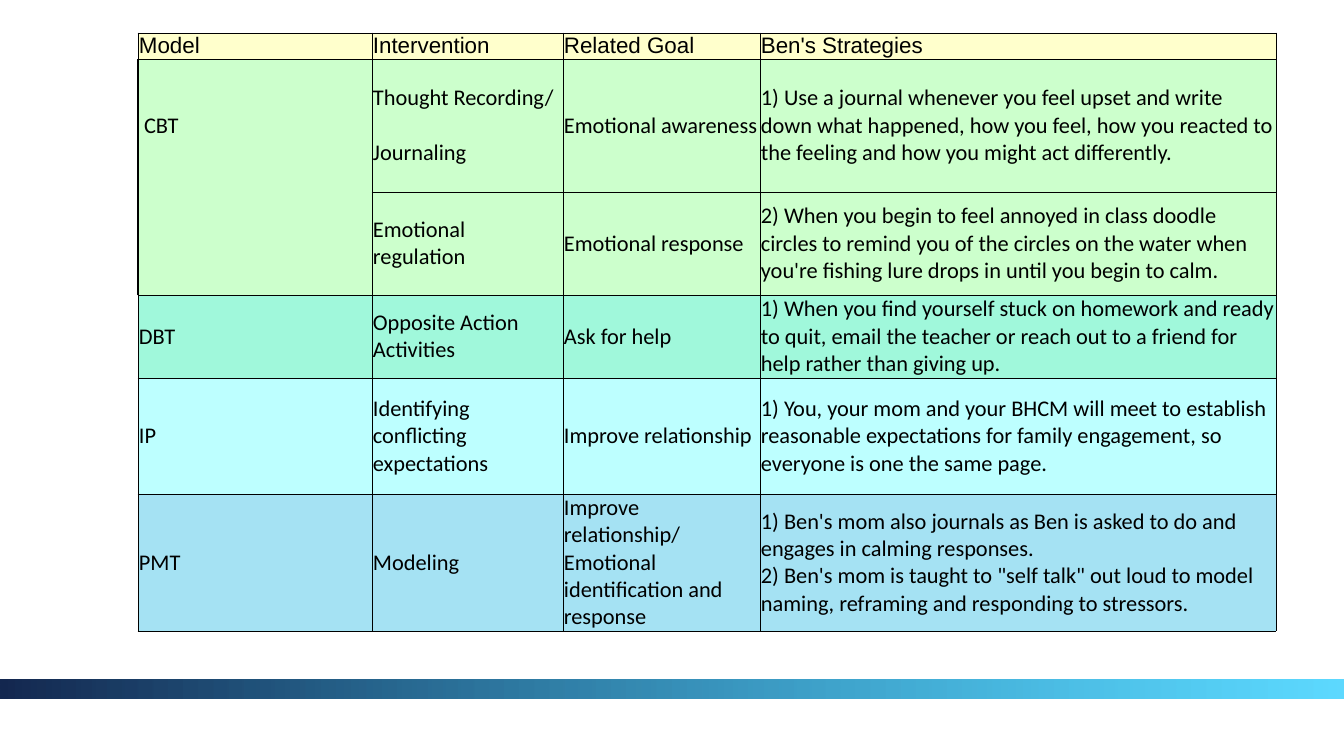
from itertools import accumulate
from lxml import etree
from pptx import Presentation
from pptx.dml.color import RGBColor
from pptx.enum.shapes import MSO_SHAPE
from pptx.enum.text import MSO_ANCHOR, PP_ALIGN
from pptx.oxml.ns import qn
from pptx.util import Emu, Pt

RECTANGLE = MSO_SHAPE.RECTANGLE
MIDDLE, LEFT = MSO_ANCHOR.MIDDLE, PP_ALIGN.LEFT

# Content: each cell is a list of paragraphs
HEADINGS = ["Model", "Intervention", "Related Goal", "Ben's Strategies"]
STRATEGIES = [
    ("cbt", [[" CBT"], ["Thought Recording/", "Journaling"], ["Emotional awareness"],
             ["1) Use a journal whenever you feel upset and write down what happened, "
              "how you feel, how you reacted to the feeling and how you might act differently."]]),
    ("cbt", [[], ["Emotional regulation"], ["Emotional response"],
             ["2) When you begin to feel annoyed in class doodle circles to remind you of "
              "the circles on the water when you're fishing lure drops in until you begin to calm."]]),
    ("dbt", [["DBT"], ["Opposite Action Activities"], ["Ask for help"],
             ["1) When you find yourself stuck on homework and ready to quit, email the teacher "
              "or reach out to a friend for help rather than giving up."]]),
    ("ip", [["IP"], ["Identifying conflicting expectations"], ["Improve relationship"],
            ["1) You, your mom and your BHCM will meet to establish reasonable expectations "
             "for family engagement, so everyone is one the same page."]]),
    ("pmt", [["PMT"], ["Modeling"],
             ["Improve relationship/ Emotional identification and response"],
             ["1) Ben's mom also journals as Ben is asked to do and engages in calming responses.",
              "2) Ben's mom is taught to \"self talk\" out loud to model naming, reframing "
              "and responding to stressors."]]),
]
ROWS = [("heading", [[heading] for heading in HEADINGS])] + STRATEGIES
JOURNALING_CELL = (1, 1)
CBT_ROWS = (1, 2)

COLORS = {
    "heading": "FFFFCC", "cbt": "CCFFCC", "dbt": "A0F8DB", "ip": "BDFFFF", "pmt": "A5E2F3",
    "text": "000000", "border": "000000", "bar_start": "142850", "bar_end": "00C4FF",
}

# Layout in px
PX = 914400 / 100.8
SLIDE_W, SLIDE_H = 1344, 756
TABLE_X, TABLE_Y = 138, 33
COLUMN_WIDTHS = [234, 191, 197, 516]
ROW_HEIGHTS = [26, 133, 103, 83, 116, 137]
BAR_Y, BAR_H = 680, 19
TEXT_SIZE, LINE_GAP = Pt(16), Pt(19.5)


def px(length):
    return Emu(round(length * PX))


def rgb(name):
    return RGBColor.from_string(COLORS[name])


def add_border(cell, index, side, points):
    """Draw one cell edge; zero points hides it."""
    line = etree.Element(qn("a:ln" + side), w=str(Pt(points or 0.5)))
    if points:
        fill = etree.SubElement(line, qn("a:solidFill"))
        etree.SubElement(fill, qn("a:srgbClr"), val=COLORS["border"])
    else:
        etree.SubElement(line, qn("a:noFill"))
    cell._tc.get_or_add_tcPr().insert(index, line)


def write_cell(cell, paragraphs, font_name, gap):
    cell.vertical_anchor = MIDDLE
    cell.margin_left = cell.margin_right = px(1)
    cell.margin_top = cell.margin_bottom = 0
    for number, text in enumerate(paragraphs):
        frame = cell.text_frame
        paragraph = frame.add_paragraph() if number else frame.paragraphs[0]
        paragraph.alignment = LEFT
        if number:
            paragraph.space_before = gap
        run = paragraph.add_run()
        run.text = text
        run.font.name, run.font.size = font_name, TEXT_SIZE
        run.font.color.rgb = rgb("text")


def add_bar(slide):
    bar = slide.shapes.add_shape(RECTANGLE, 0, px(BAR_Y), px(SLIDE_W), px(BAR_H))
    bar.shadow.inherit = False
    bar.line.fill.background()
    bar.fill.gradient()
    bar.fill.gradient_angle = 0
    for stop, name in zip(bar.fill.gradient_stops, ("bar_start", "bar_end")):
        stop.color.rgb = rgb(name)
    end_color = list(bar._element.spPr.iter(qn("a:srgbClr")))[-1]
    etree.SubElement(end_color, qn("a:alpha"), val="64000")


def add_strategy_table(slide):
    table_w = list(accumulate(COLUMN_WIDTHS))[-1]
    table_h = list(accumulate(ROW_HEIGHTS))[-1]
    table = slide.shapes.add_table(len(ROWS), len(HEADINGS), px(TABLE_X), px(TABLE_Y),
                                   px(table_w), px(table_h)).table
    table.first_row = table.horz_banding = False
    for column, width in zip(table.columns, COLUMN_WIDTHS):
        column.width = px(width)
    for row, height in zip(table.rows, ROW_HEIGHTS):
        row.height = px(height)

    for r, (model, cells) in enumerate(ROWS):
        for c, paragraphs in enumerate(cells):
            cell = table.cell(r, c)
            gap = LINE_GAP if (r, c) == JOURNALING_CELL else Pt(0)
            write_cell(cell, paragraphs, "Calibri" if r else "Arial", gap)
            cell.fill.solid()
            cell.fill.fore_color.rgb = rgb(model)
            # The two CBT model cells share one open edge
            edges = {"L": 0.5, "R": 0.5, "T": 0.5, "B": 0.5}
            if c == 0 and r in CBT_ROWS:
                edges["L"] = 1
                edges["B" if r == CBT_ROWS[0] else "T"] = 0
            for index, (side, points) in enumerate(edges.items()):
                add_border(cell, index, side, points)


def main():
    deck = Presentation()
    deck.slide_width, deck.slide_height = px(SLIDE_W), px(SLIDE_H)
    slide = deck.slides.add_slide(deck.slide_layouts[6])
    add_bar(slide)
    add_strategy_table(slide)
    deck.save("out.pptx")


if __name__ == "__main__":
    main()
